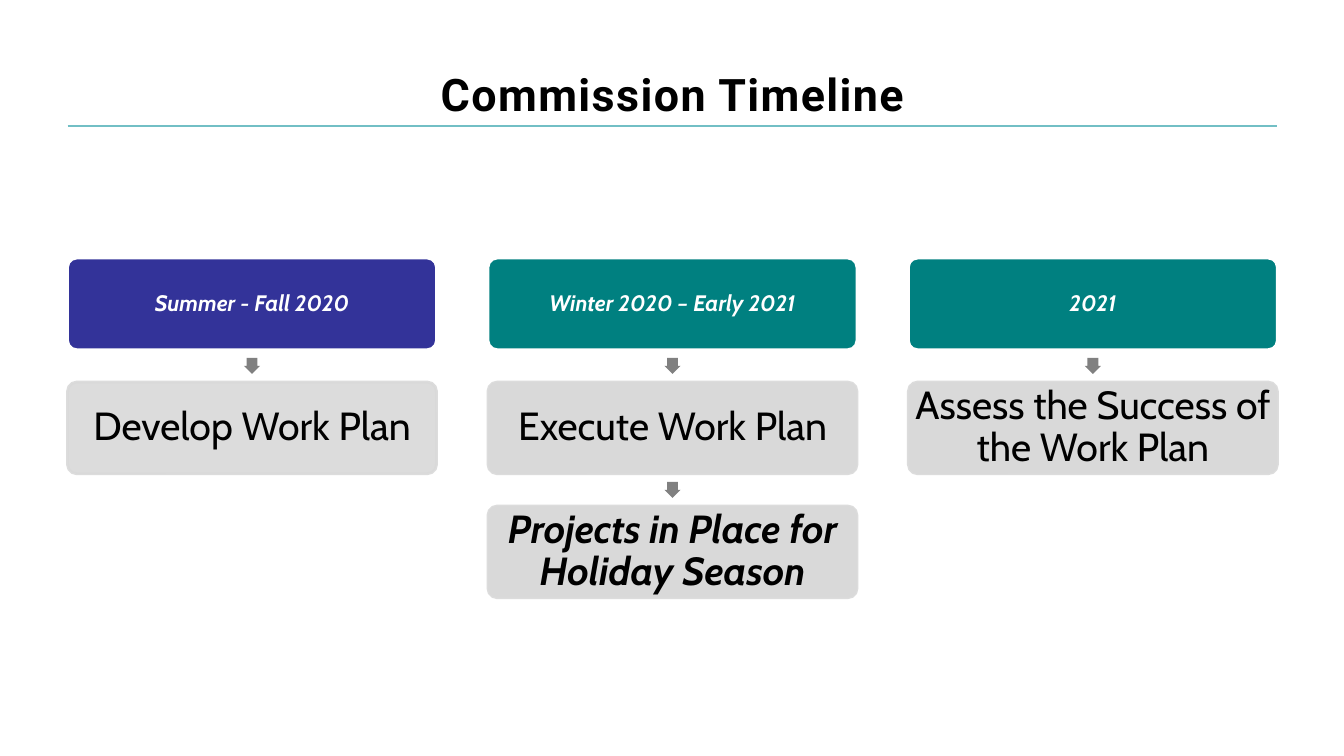
from lxml.etree import SubElement
from pptx import Presentation
from pptx.dml.color import RGBColor
from pptx.enum.shapes import MSO_CONNECTOR, MSO_SHAPE
from pptx.enum.text import MSO_ANCHOR, PP_ALIGN
from pptx.oxml.ns import qn
from pptx.util import Inches, Pt

BLACK = RGBColor(0x00, 0x00, 0x00)
WHITE = RGBColor(0xFF, 0xFF, 0xFF)
INDIGO = RGBColor(0x33, 0x33, 0x99)
TEAL = RGBColor(0x00, 0x80, 0x80)
RULE_TEAL = RGBColor(0x72, 0xBF, 0xC5)
CARD_GRAY = RGBColor(0xD9, 0xD9, 0xD9)
ARROW_GRAY = RGBColor(0x80, 0x80, 0x80)

LEFT, TOP = 0.67, 2.56
BOX_WIDTH, BOX_HEIGHT = 3.66, 0.91
COLUMN_STEP, ROW_STEP = 4.17, 1.23
ARROW_SIZE, ARROW_RISE = 0.16, 0.24

PHASES = [
    ("Summer - Fall 2020", INDIGO, [("Develop Work Plan", False, 90)]),
    ("Winter 2020 – Early 2021", TEAL, [
        ("Execute Work Plan", False, 100),
        ("Projects in Place for Holiday Season", True, 100),
    ]),
    ("2021", TEAL, [("Assess the Success of the Work Plan", False, 100)]),
]


class TimelineSlide:
    """Draws the timeline elements on one slide in a shared style."""

    def __init__(self, slide):
        self.slide = slide
        self.body_font = "Cabin"
        self.title_font = "Roboto"

    def set_text(self, shape, text, font_name, size, color, bold, italic):
        frame = shape.text_frame
        frame.text = text
        frame.word_wrap = True
        frame.vertical_anchor = MSO_ANCHOR.MIDDLE
        para = frame.paragraphs[0]
        para.alignment = PP_ALIGN.CENTER
        span = para.runs[0]
        span.font.name = font_name
        span.font.size = Pt(size)
        span.font.color.rgb = color
        span.font.bold = bold
        span.font.italic = italic
        return para

    def set_opacity(self, fill_parent, percent):
        color = fill_parent.find(qn("a:solidFill"))[0]
        SubElement(color, qn("a:alpha")).set("val", str(percent * 1000))

    def title(self, text):
        box = self.slide.shapes.add_textbox(
            Inches(LEFT), Inches(0.3), Inches(12), Inches(1.25))
        para = self.set_text(box, text, self.title_font, 32, BLACK, True, False)
        para.runs[0].font._element.set("spc", "100")

    def rule(self, y):
        line = self.slide.shapes.add_connector(
            MSO_CONNECTOR.STRAIGHT,
            Inches(LEFT), Inches(y), Inches(LEFT + 12), Inches(y))
        line.line.color.rgb = RULE_TEAL
        line.line.width = Pt(1)
        SubElement(line._element.spPr, qn("a:effectLst"))

    def box(self, x, y, text, fill, outline, size, color, bold):
        shape = self.slide.shapes.add_shape(
            MSO_SHAPE.ROUNDED_RECTANGLE,
            Inches(x), Inches(y), Inches(BOX_WIDTH), Inches(BOX_HEIGHT))
        shape.adjustments[0] = 0.1
        shape.shadow.inherit = False
        shape.fill.solid()
        shape.fill.fore_color.rgb = fill
        shape.line.color.rgb = outline
        shape.line.width = Pt(2)
        frame = shape.text_frame
        frame.margin_left = frame.margin_right = Inches(0.03)
        frame.margin_top = frame.margin_bottom = Inches(0.03)
        para = self.set_text(shape, text, self.body_font, size, color, bold, bold)
        para.line_spacing = 0.9
        return shape

    def header(self, x, y, text, fill):
        self.box(x, y, text, fill, WHITE, 16, WHITE, True)

    def card(self, x, y, text, emphasis, opacity):
        shape = self.box(x, y, text, CARD_GRAY, CARD_GRAY, 28, BLACK, emphasis)
        properties = shape._element.spPr
        self.set_opacity(properties.find(qn("a:ln")), 90)
        if opacity < 100:
            self.set_opacity(properties, opacity)

    def arrow(self, x, y):
        shape = self.slide.shapes.add_shape(
            MSO_SHAPE.DOWN_ARROW,
            Inches(x), Inches(y), Inches(ARROW_SIZE), Inches(ARROW_SIZE))
        shape.adjustments[0] = 0.67
        shape.adjustments[1] = 0.5
        shape.shadow.inherit = False
        shape.fill.solid()
        shape.fill.fore_color.rgb = ARROW_GRAY
        shape.line.fill.background()


def main():
    deck = Presentation()
    deck.slide_width = Inches(13.33)
    deck.slide_height = Inches(7.5)
    page = TimelineSlide(deck.slides.add_slide(deck.slide_layouts[6]))
    page.rule(1.25)
    page.title("Commission Timeline")
    for column, (period, fill, tasks) in enumerate(PHASES):
        x = LEFT + column * COLUMN_STEP
        page.header(x, TOP, period, fill)
        for row, (task, emphasis, opacity) in enumerate(tasks, start=1):
            y = TOP + row * ROW_STEP
            page.arrow(x + (BOX_WIDTH - ARROW_SIZE) / 2, y - ARROW_RISE)
            page.card(x, y, task, emphasis, opacity)
    deck.save("out.pptx")


if __name__ == "__main__":
    main()
